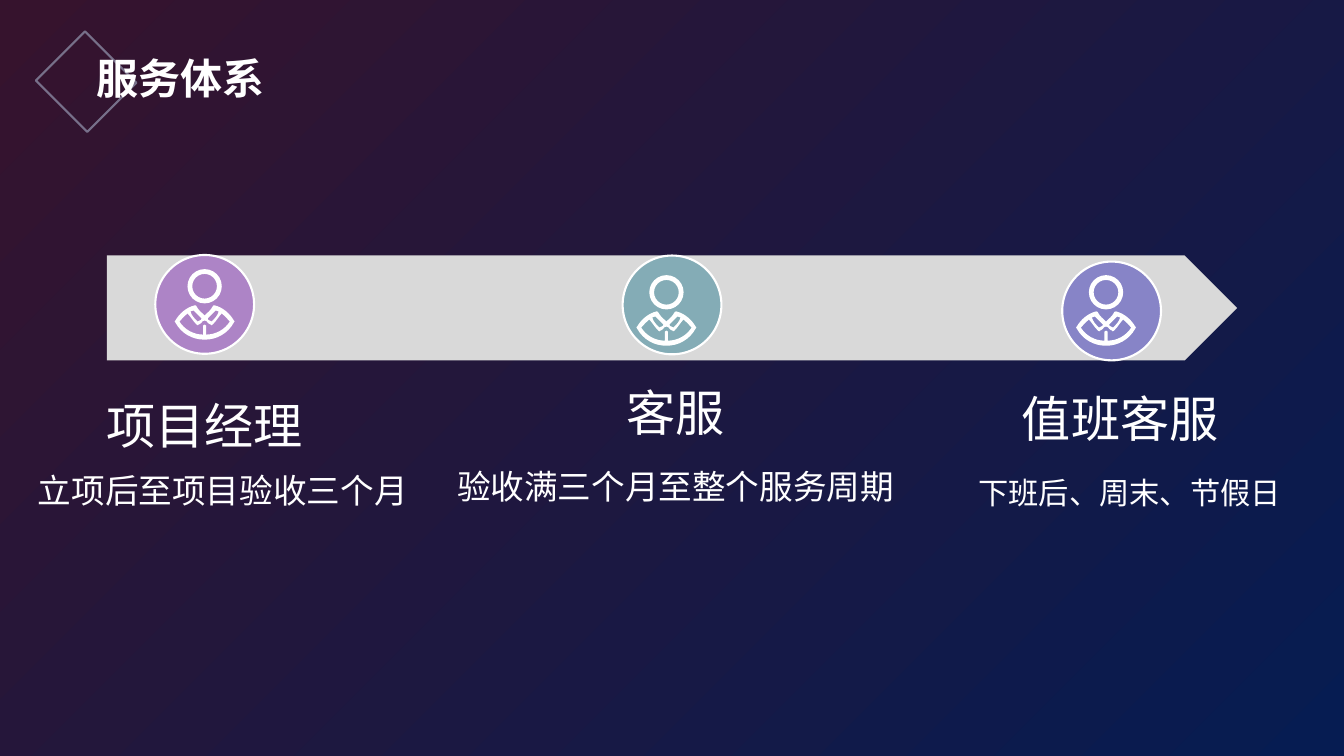
"""Build the service-system slide: three support roles along a timeline arrow."""
from dataclasses import dataclass

import lxml.etree
import pptx
import pptx.dml.color
import pptx.enum.shapes
import pptx.enum.text
import pptx.oxml.ns
import pptx.util

CELL = 0.1
FONT = "Noto Sans CJK SC"
WHITE = "FFFFFF"
SHAPE = pptx.enum.shapes.MSO_SHAPE
ALIGN = pptx.enum.text.PP_ALIGN
ANCHOR = pptx.enum.text.MSO_ANCHOR

Point = tuple[float, float]

BADGE = 9.8
HEAD = 3.4
BUST_AXIS = 29
BUST_SCALE = 10

JACKET: list[Point] = [
    (29, 10),
    (32, 7), (35, 5), (37, 1),
    (37, 0), (38, 0), (39, 0),
    (47, 2), (54, 8), (58, 15),
    (59, 15), (59, 16), (58, 17),
    (52, 28), (41, 34), (29, 34),
]
LINING: list[Point] = [
    (29, 15),
    (30, 15), (32, 16), (32, 17),
    (33, 18), (34, 19), (35, 19),
    (35, 20), (36, 20), (37, 19),
    (41, 15), (43, 11), (46, 8),
    (49, 10), (51, 13), (54, 16),
    (49, 24), (40, 29), (30.5, 29),
    (30.5, 29), (30.5, 20), (30.5, 20),
    (30.5, 19), (30, 19), (29, 19),
]
COLLAR: list[Point] = [
    (40, 5),
    (41, 5), (42, 6), (43, 6),
    (42, 10), (39, 13), (36, 16),
    (35, 15), (35, 15), (34, 15),
    (33, 15), (32, 14), (32, 13),
    (35, 10), (37, 8), (40, 5),
]


@dataclass(frozen=True)
class Area:
    """A rectangle in grid columns and rows."""
    column: float
    row: float
    columns: float
    rows: float


@dataclass(frozen=True)
class Caption:
    """A line of text with its area and style."""
    text: str
    area: Area
    size: float
    bold: bool = False
    wrap: bool = False
    align: ALIGN = ALIGN.CENTER
    anchor: ANCHOR = ANCHOR.BOTTOM
    spacing: float = 1.0


@dataclass(frozen=True)
class Role:
    """A support role: badge, bust position and two captions."""
    color: str
    badge: Point
    bust: Point
    name: Caption
    period: Caption


TITLE = Caption("服务体系", Area(8.6, 5.2, 115, 5.6), 30, bold=True, wrap=True,
                align=ALIGN.LEFT, anchor=ANCHOR.MIDDLE, spacing=0.9)
ROLES = [
    Role("AD84C6", (15.4, 25.3), (17.4, 30.3),
         Caption("项目经理", Area(8.3, 38.8, 24, 6.8), 35.1),
         Caption("立项后至项目验收三个月", Area(1.6, 41.6, 41, 9.5), 24)),
    Role("84ACB6", (61.75, 25.35), (63.2, 30.9),
         Caption("客服", Area(55, 37.5, 24, 6.8), 35.1),
         Caption("验收满三个月至整个服务周期", Area(43, 43.9, 48, 6.8), 24)),
    Role("8784C7", (105.35, 25.95), (106.8, 30.9),
         Caption("值班客服", Area(99.1, 38.1, 24, 6.8), 35.1),
         Caption("下班后、周末、节假日", Area(94.85, 43.4, 34.4, 7.7), 21.6, spacing=1.8)),
]


def grid(cells: float) -> pptx.util.Length:
    """Convert grid cells to a length."""
    return pptx.util.Inches(cells * CELL)


def box(area: Area) -> tuple:
    """Return left, top, width and height of an area."""
    return grid(area.column), grid(area.row), grid(area.columns), grid(area.rows)


def rgb(color: str) -> pptx.dml.color.RGBColor:
    """Convert a hex string to a colour."""
    return pptx.dml.color.RGBColor.from_string(color)


def paint(shape, fill: str | None, line: str | None = None) -> None:
    """Set fill and outline and drop the shadow."""
    shape.shadow.inherit = False
    if fill:
        shape.fill.solid()
        shape.fill.fore_color.rgb = rgb(fill)
    else:
        shape.fill.background()
    if line:
        shape.line.color.rgb = rgb(line)
        shape.line.width = pptx.util.Pt(1.5)
    else:
        shape.line.fill.background()


def add_preset(slide, kind: SHAPE, area: Area, fill: str | None, line: str | None = None):
    """Add a painted preset shape."""
    shape = slide.shapes.add_shape(kind, *box(area))
    paint(shape, fill, line)
    return shape


def add_caption(slide, caption: Caption) -> None:
    """Add a caption as a text box."""
    frame = slide.shapes.add_textbox(*box(caption.area)).text_frame
    frame.word_wrap = caption.wrap
    frame.vertical_anchor = caption.anchor
    paragraph = frame.paragraphs[0]
    paragraph.alignment = caption.align
    paragraph.line_spacing = caption.spacing
    run = paragraph.add_run()
    run.text = caption.text
    run.font.size = pptx.util.Pt(caption.size)
    run.font.bold = caption.bold
    run.font.color.rgb = rgb(WHITE)
    run.font.name = FONT
    lxml.etree.SubElement(run.font._element, pptx.oxml.ns.qn("a:ea"), typeface=FONT)


def mirror(points: list[Point]) -> list[Point]:
    """Reflect points in the bust axis, in reverse order."""
    return [(2 * BUST_AXIS - x, y) for x, y in reversed(points)]


def bend(shape) -> None:
    """Turn every three line segments into one cubic curve."""
    segments = list(shape._element.iter(pptx.oxml.ns.qn("a:lnTo")))
    for first, second, end in zip(segments[::3], segments[1::3], segments[2::3]):
        curve = lxml.etree.Element(pptx.oxml.ns.qn("a:cubicBezTo"))
        first.addprevious(curve)
        for segment in (first, second, end):
            curve.append(segment[0])
            segment.getparent().remove(segment)


def add_person(slide, bust: Point) -> None:
    """Add a ring head above a bust with a collar."""
    column, row = bust
    head = add_preset(slide, SHAPE.DONUT, Area(column + 1.2, row - 3.6, HEAD, HEAD), WHITE)
    head.adjustments[0] = 0.14
    contours = [JACKET + mirror(JACKET)[1:], LINING + mirror(LINING)[1:], COLLAR, mirror(COLLAR)]
    scaled = [[(x * BUST_SCALE, y * BUST_SCALE) for x, y in contour] for contour in contours]
    builder = slide.shapes.build_freeform(*scaled[0][0], scale=grid(CELL) / BUST_SCALE)
    builder.add_line_segments(scaled[0][1:])
    for contour in scaled[1:]:
        builder.move_to(*contour[0])
        builder.add_line_segments(contour[1:])
    torso = builder.convert_to_shape(grid(column), grid(row))
    bend(torso)
    paint(torso, WHITE)


def main() -> None:
    """Build and save the slide."""
    deck = pptx.Presentation()
    deck.slide_width, deck.slide_height = pptx.util.Inches(13.33), pptx.util.Inches(7.5)
    slide = deck.slides.add_slide(deck.slide_layouts[6])
    backdrop = slide.background.fill
    backdrop.gradient()
    backdrop.gradient_angle = 315
    for stop, color in zip(backdrop.gradient_stops, ("36132D", "061C52")):
        stop.color.rgb = rgb(color)
    diamond = add_preset(slide, SHAPE.RECTANGLE, Area(5.1, 4.5, 6.9, 7.2), None, "77708A")
    diamond.rotation = 315
    add_caption(slide, TITLE)
    add_preset(slide, SHAPE.PENTAGON, Area(10.6, 25.35, 112.1, 10.4), "D9D9D9")
    for role in ROLES:
        add_preset(slide, SHAPE.OVAL, Area(*role.badge, BADGE, BADGE), role.color, WHITE)
        add_person(slide, role.bust)
        add_caption(slide, role.name)
        add_caption(slide, role.period)
    deck.save("out.pptx")


if __name__ == "__main__":
    main()
